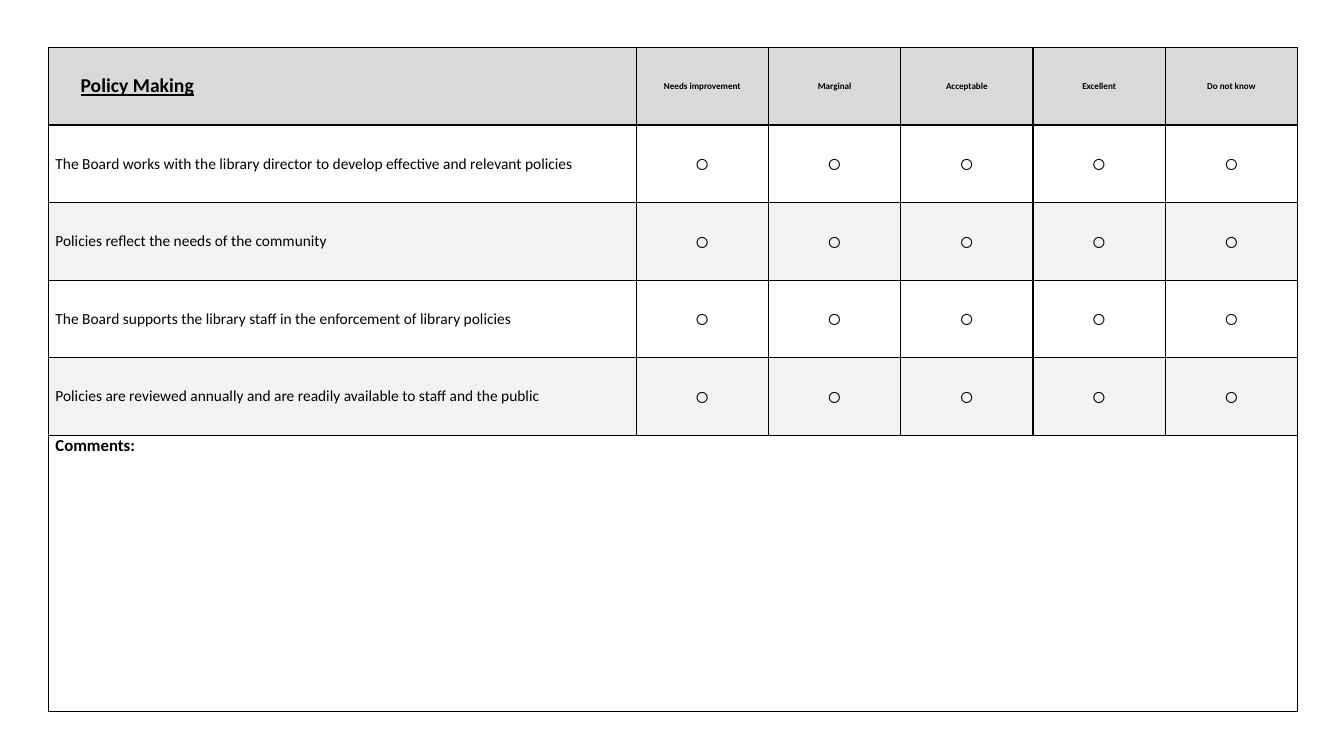
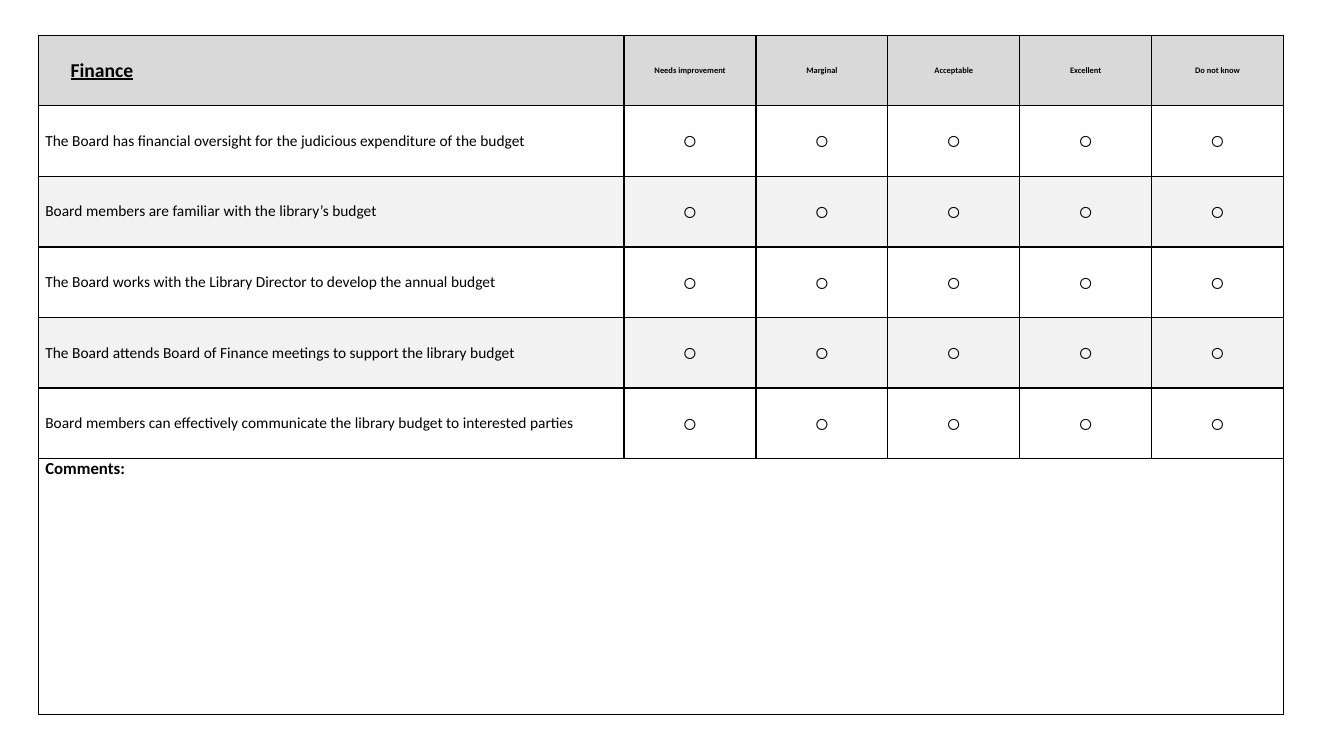
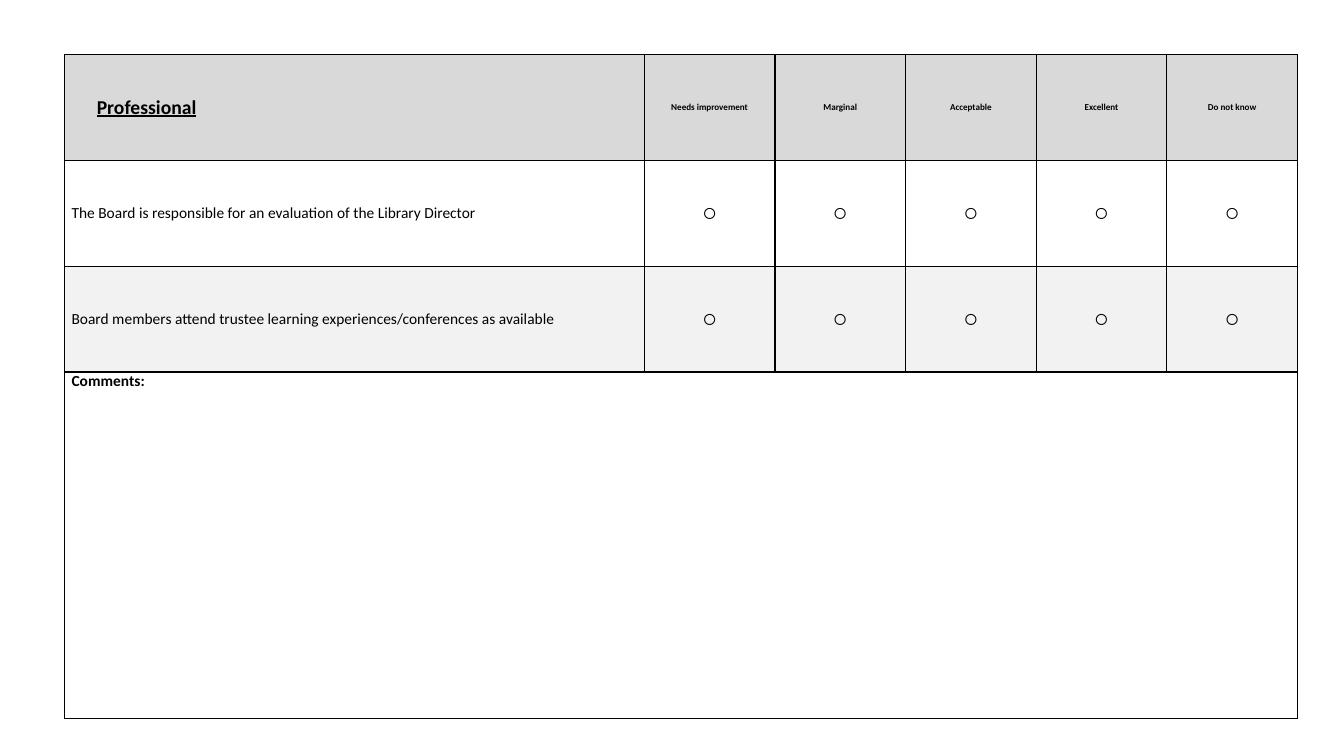
from lxml.etree import SubElement
from pptx import Presentation
from pptx.dml.color import RGBColor
from pptx.enum.text import MSO_ANCHOR, PP_ALIGN
from pptx.oxml.ns import qn
from pptx.util import Inches, Pt

BLACK = RGBColor(0x00, 0x00, 0x00)
GRAY = RGBColor(0xD9, 0xD9, 0xD9)
PALE = RGBColor(0xF2, 0xF2, 0xF2)
WHITE = RGBColor(0xFF, 0xFF, 0xFF)

RATES = ["Needs improvement", "Marginal", "Acceptable", "Excellent", "Do not know"]
FORMS = [
    dict(
        title="Policy Making",
        box=(0.48, 0.47, 12.39, 6.59), first=5.83, high=0.77,
        items=[
            "The Board works with the library director to develop effective and relevant policies",
            "Policies reflect the needs of the community",
            "The Board supports the library staff in the enforcement of library policies",
            "Policies are reviewed annually and are readily available to staff and the public",
        ],
    ),
    dict(
        title="Finance",
        box=(0.38, 0.35, 12.35, 6.74), first=5.81, high=0.7, small=6,
        items=[
            "The Board has financial oversight for the judicious expenditure of the budget",
            "Board members are familiar with the library’s budget",
            "The Board works with the Library Director to develop the annual budget",
            "The Board attends Board of Finance meetings to support the library budget",
            "Board members can effectively communicate the library budget to interested parties",
        ],
    ),
    dict(
        title="Professional",
        box=(0.64, 0.54, 12.23, 6.59), first=5.75, high=1.05, note=11,
        items=[
            "The Board is responsible for an evaluation of the Library Director",
            "Board members attend trustee learning experiences/conferences as available",
        ],
    ),
]


class Deck:
    def __init__(self):
        self.prs = Presentation()
        self.prs.slide_width = Inches(13.33)
        self.prs.slide_height = Inches(7.5)
        self.slide = None

    def page(self):
        self.slide = self.prs.slides.add_slide(self.prs.slide_layouts[6])

    def edge(self, cell):
        props = cell._tc.get_or_add_tcPr()
        for side in ("a:lnL", "a:lnR", "a:lnT", "a:lnB"):
            line = SubElement(props, qn(side), w=str(Pt(1)))
            fill = SubElement(line, qn("a:solidFill"))
            SubElement(fill, qn("a:srgbClr"), val=str(BLACK))

    def frame(self, cell, fill):
        cell.margin_left = cell.margin_right = Inches(0.07)
        cell.margin_top = cell.margin_bottom = 0
        self.edge(cell)
        cell.fill.solid()
        cell.fill.fore_color.rgb = fill

    def label(self, cell, text, size, bold=False, line=False, font="Calibri",
              align=PP_ALIGN.LEFT, anchor=MSO_ANCHOR.MIDDLE):
        cell.vertical_anchor = anchor
        par = cell.text_frame.paragraphs[0]
        par.text = text
        par.alignment = align
        face = par.runs[0].font
        face.name, face.size = font, Pt(size)
        face.bold, face.underline = bold, line
        face.color.rgb = BLACK
        return par

    def table(self, rows, box, first, high):
        left, top, width, height = box
        table = self.slide.shapes.add_table(
            rows, len(RATES) + 1, Inches(left), Inches(top),
            Inches(width), Inches(height)).table
        table.first_row = table.horz_banding = False
        for col in table.columns:
            col.width = Inches((width - first) / len(RATES))
        table.columns[0].width = Inches(first)
        for row in table.rows:
            row.height = Inches(high)
        table.rows[rows - 1].height = Inches(height - high * (rows - 1))
        return table

    def form(self, title, box, first, high, items, small=6.5, note=12):
        last = len(items) + 1
        table = self.table(last + 1, box, first, high)
        fills = [GRAY] + [PALE if n % 2 else WHITE for n in range(len(items))] + [WHITE]
        for n, fill in enumerate(fills):
            for col in range(len(RATES) + 1):
                self.frame(table.cell(n, col), fill)

        par = self.label(table.cell(0, 0), title, 14, bold=True, line=True)
        par._p.get_or_add_pPr().set("marL", str(Inches(0.25)))
        for col, rate in enumerate(RATES, 1):
            self.label(table.cell(0, col), rate, small, bold=True, align=PP_ALIGN.CENTER)
        for n, item in enumerate(items, 1):
            self.label(table.cell(n, 0), item, 11)
            for col in range(1, len(RATES) + 1):
                self.label(table.cell(n, col), "○", 18, font="Arial", align=PP_ALIGN.CENTER)

        foot = table.cell(last, 0)
        foot.merge(table.cell(last, len(RATES)))
        self.label(foot, "Comments:", note, bold=True, anchor=MSO_ANCHOR.TOP)


def main():
    deck = Deck()
    for form in FORMS:
        deck.page()
        deck.form(**form)
    deck.prs.save("out.pptx")


if __name__ == "__main__":
    main()
